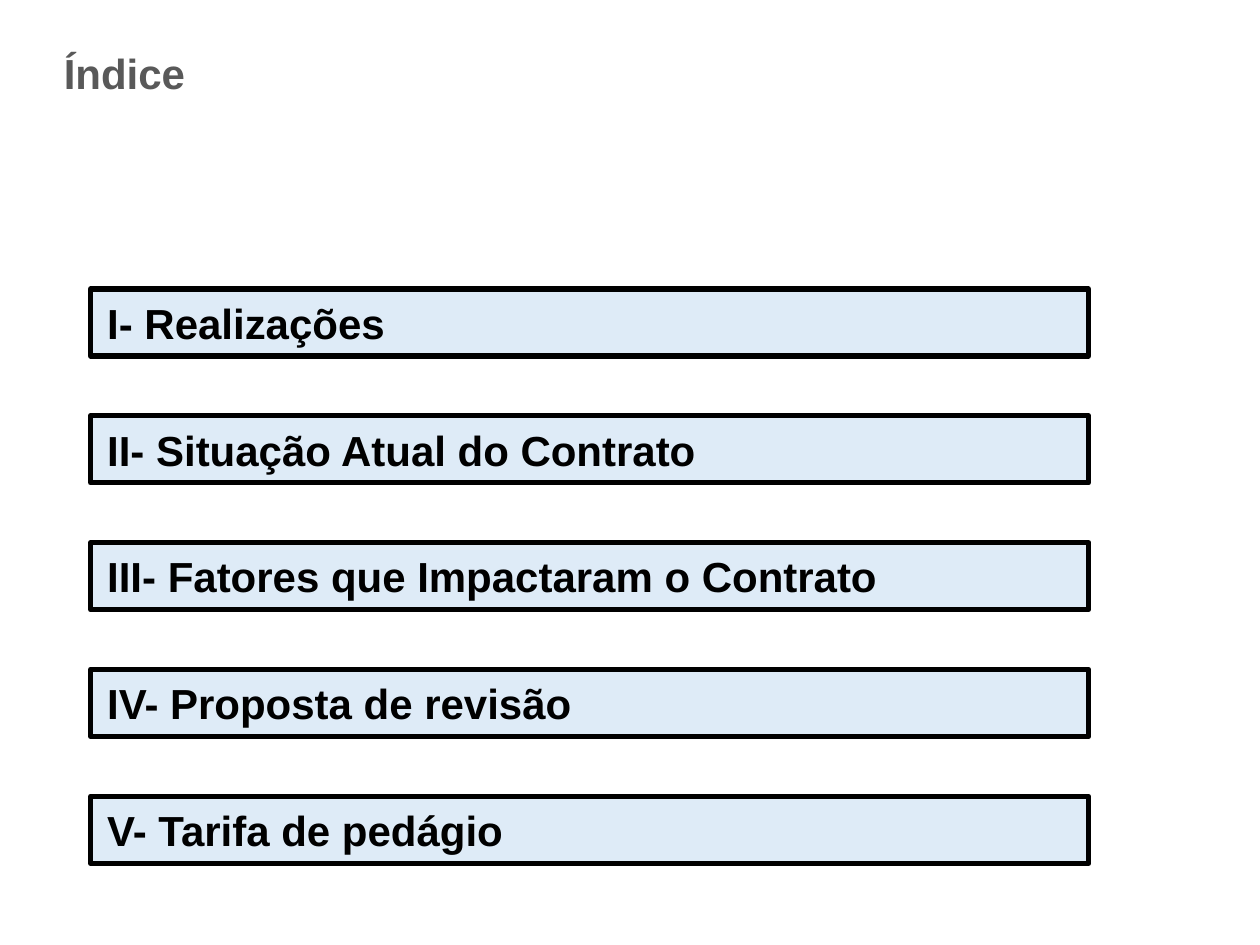
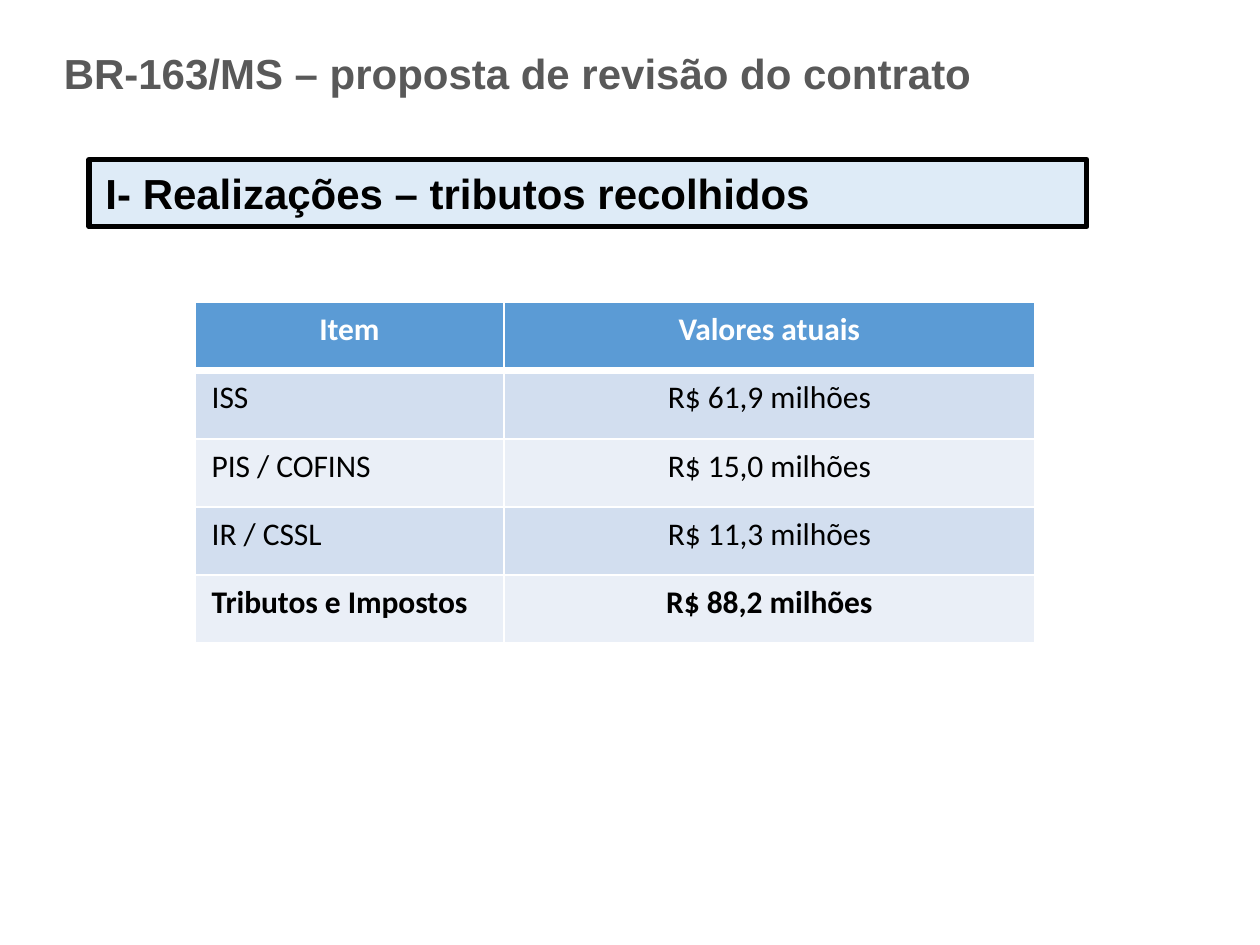
from lxml import etree
from pptx import Presentation
from pptx.dml.color import RGBColor
from pptx.enum.shapes import MSO_SHAPE
from pptx.enum.text import MSO_ANCHOR, MSO_AUTO_SIZE, PP_ALIGN
from pptx.oxml.ns import qn
from pptx.util import Inches, Pt

RECTANGLE = MSO_SHAPE.RECTANGLE
LEFT, CENTER = PP_ALIGN.LEFT, PP_ALIGN.CENTER
TOP = MSO_ANCHOR.TOP
NO_AUTOFIT = MSO_AUTO_SIZE.NONE
TITLE_ONLY_LAYOUT = 5


def rgb(hex_color):
    return RGBColor.from_string(hex_color)


class Deck:
    WIDTH = 7.5
    HEIGHT = WIDTH * 3 / 4
    HEADING_FONT, TABLE_FONT = "Arial", "Calibri"
    HEADING_SIZE, TABLE_SIZE = 18, 13.5
    TITLE_GRAY, BLACK, WHITE = "595959", "000000", "FFFFFF"
    BAND_FILL, HEADER_FILL = "DEEBF7", "5B9BD5"
    ROW_FILLS = ("D2DEEF", "EAEFF7")
    HEADING_HEIGHT = 0.4

    def __init__(self):
        self.prs = Presentation()
        self.prs.slide_width = Inches(self.WIDTH)
        self.prs.slide_height = Inches(self.HEIGHT)
        self.slide = None

    def add_slide(self, title):
        layout = self.prs.slide_layouts[TITLE_ONLY_LAYOUT]
        self.slide = self.prs.slides.add_slide(layout)
        heading = self.slide.shapes.title
        heading.left, heading.top = Inches(0.28), Inches(0.23)
        heading.width, heading.height = Inches(5.73), Inches(self.HEADING_HEIGHT)
        self.write_heading(heading.text_frame, title, self.TITLE_GRAY)

    def write_heading(self, frame, text, color):
        frame.text = text
        frame.word_wrap = True
        frame.auto_size = NO_AUTOFIT
        frame.vertical_anchor = TOP
        self.format_text(frame.paragraphs[0], self.HEADING_FONT,
                         self.HEADING_SIZE, color, True, LEFT)

    def format_text(self, paragraph, name, size, color, bold, align):
        paragraph.alignment = align
        for run in paragraph.runs:
            run.font.name, run.font.size = name, Pt(size)
            run.font.bold = bold
            run.font.color.rgb = rgb(color)

    def add_band(self, text, left, top):
        """Add an outlined section heading."""
        band = self.slide.shapes.add_shape(
            RECTANGLE, Inches(left), Inches(top),
            Inches(5.94), Inches(self.HEADING_HEIGHT))
        band.shadow.inherit = False
        band.fill.solid()
        band.fill.fore_color.rgb = rgb(self.BAND_FILL)
        band.line.color.rgb = rgb(self.BLACK)
        band.line.width = Pt(2.25)
        self.write_heading(band.text_frame, text, self.BLACK)

    def add_table(self, rows, left, top, column_widths, height):
        """Add a banded table whose first row is the header and last the total."""
        table = self.slide.shapes.add_table(
            len(rows), len(column_widths), Inches(left), Inches(top),
            Inches(sum(column_widths)), Inches(height)).table
        for column, width in zip(table.columns, column_widths):
            column.width = Inches(width)
        for r, values in enumerate(rows):
            header, total = r == 0, r == len(rows) - 1
            fill = self.HEADER_FILL if header else self.ROW_FILLS[(r - 1) % 2]
            for c, value in enumerate(values):
                cell = table.cell(r, c)
                cell.text = value
                cell.vertical_anchor = TOP
                self.set_borders(cell, top=3 if r == 1 else 1,
                                 bottom=3 if header else 1)
                cell.fill.solid()
                cell.fill.fore_color.rgb = rgb(fill)
                self.format_text(
                    cell.text_frame.paragraphs[0], self.TABLE_FONT,
                    self.TABLE_SIZE, self.WHITE if header else self.BLACK,
                    header or total, CENTER if header or c else LEFT)

    def set_borders(self, cell, top, bottom):
        """Draw white borders; top and bottom are widths in points."""
        properties = cell._tc.get_or_add_tcPr()
        for side, width in (("L", 1), ("R", 1), ("T", top), ("B", bottom)):
            line = etree.SubElement(properties, qn(f"a:ln{side}"), w=str(Pt(width)))
            fill = etree.SubElement(line, qn("a:solidFill"))
            etree.SubElement(fill, qn("a:srgbClr"), val=self.WHITE)


def main():
    deck = Deck()

    deck.add_slide("Índice")
    sections = ("I- Realizações", "II- Situação Atual do Contrato",
                "III- Fatores que Impactaram o Contrato",
                "IV- Proposta de revisão", "V- Tarifa de pedágio")
    first_top, last_top = 1.72, 4.74
    pitch = (last_top - first_top) / (len(sections) - 1)
    for i, section in enumerate(sections):
        deck.add_band(section, 0.54, first_top + pitch * i)

    deck.add_slide("BR-163/MS – proposta de revisão do contrato")
    deck.add_band("I- Realizações – tributos recolhidos", 0.53, 0.95)
    taxes = (("Item", "Valores atuais"),
             ("ISS", "R$ 61,9 milhões"),
             ("PIS / COFINS", "R$ 15,0 milhões"),
             ("IR / CSSL", "R$ 11,3 milhões"),
             ("Tributos e Impostos", "R$ 88,2 milhões"))
    deck.add_table(taxes, 1.16, 1.8, (1.84, 3.16), 2.03)

    deck.prs.save("out.pptx")


if __name__ == "__main__":
    main()
